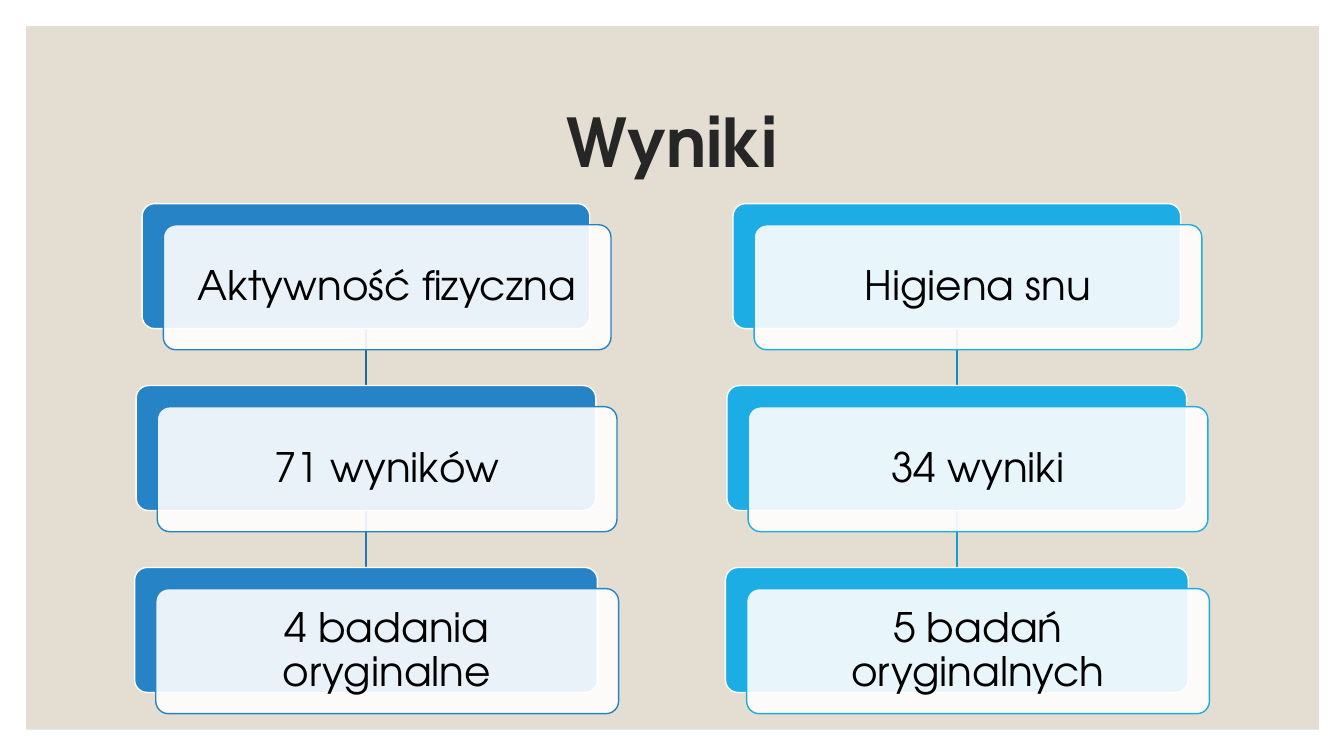
from dataclasses import dataclass

from lxml.etree import SubElement
from pptx import Presentation
from pptx.dml.color import RGBColor
from pptx.enum.shapes import MSO_CONNECTOR, MSO_SHAPE
from pptx.enum.text import MSO_ANCHOR, PP_ALIGN
from pptx.oxml.ns import qn
from pptx.util import Inches, Pt

# Content
TITLE = "Wyniki"
COLUMNS = [
    {"center": 3.63, "color": "2683C6", "links": ["1E699F", "2277B4"],
     "steps": ["Aktywność fizyczna", "71 wyników", "4 badania oryginalne"]},
    {"center": 9.49, "color": "1CADE4", "links": ["168BB7", "199DCF"],
     "steps": ["Higiena snu", "34 wyniki", "5 badań oryginalnych"]},
]


@dataclass(frozen=True)
class Theme:
    font: str = "TeX Gyre Adventor"
    title_size: int = 48
    card_size: int = 29
    title_color: str = "262626"
    card_text: str = "000000"
    white: str = "FFFFFF"
    backdrop: str = "E3DED1"
    card_opacity: int = 90


THEME = Theme()

# Layout in inches
WIDTHS = [4.44, 4.56, 4.59]
CARD_HEIGHT = 1.24
FIRST_TOP = 2.02
ROW_STEP = 1.805
CARD_SHIFT = 0.21
CARD_INSET = 0.15


def rgb(code):
    return RGBColor.from_string(code)


def add_box(page, kind, left, top, width, height, fill, line=None):
    box = page.shapes.add_shape(
        kind, Inches(left), Inches(top), Inches(width), Inches(height))
    box.shadow.inherit = False
    box.fill.solid()
    box.fill.fore_color.rgb = rgb(fill)
    if line:
        box.line.color.rgb = rgb(line)
        box.line.width = Pt(1)
    else:
        box.line.fill.background()
    return box


def add_card(page, left, top, width, fill, line):
    card = add_box(page, MSO_SHAPE.ROUNDED_RECTANGLE,
                   left, top, width, CARD_HEIGHT, fill, line)
    card.adjustments[0] = 0.1
    return card


def set_opacity(box, percent):
    color = box.fill._xPr.find(qn("a:solidFill"))[0]
    SubElement(color, qn("a:alpha"), val=str(percent * 1000))


def write(box, text, size, color, bold=False, inset=0.1):
    frame = box.text_frame
    margin = Inches(inset)
    frame_format = {"word_wrap": True, "vertical_anchor": MSO_ANCHOR.MIDDLE,
                    "margin_left": margin, "margin_right": margin,
                    "margin_top": margin, "margin_bottom": margin}
    for name, value in frame_format.items():
        setattr(frame, name, value)
    para = frame.paragraphs[0]
    para.alignment = PP_ALIGN.CENTER
    para.line_spacing = 0.9
    span = para.add_run()
    span.text = text
    font_format = {"name": THEME.font, "size": Pt(size), "bold": bold}
    for name, value in font_format.items():
        setattr(span.font, name, value)
    span.font.color.rgb = rgb(color)


def add_link(page, color):
    link = page.shapes.add_connector(MSO_CONNECTOR.STRAIGHT, 0, 0, 0, 0)
    link.line.color.rgb = rgb(color)
    link.line.width = Pt(1)
    SubElement(link._element.spPr, qn("a:effectLst"))
    return link


def add_column(page, column):
    # Links come first so that they lie behind the cards
    links = [add_link(page, color) for color in column["links"]]
    backs = []
    for row, (text, width) in enumerate(zip(column["steps"], WIDTHS)):
        left = column["center"] - width / 2
        top = FIRST_TOP + row * ROW_STEP
        backs.append(add_card(page, left, top, width,
                              column["color"], THEME.white))
        front = add_card(page, left + CARD_SHIFT, top + CARD_SHIFT, width,
                         THEME.white, column["color"])
        set_opacity(front, THEME.card_opacity)
        write(front, text, THEME.card_size, THEME.card_text,
              inset=CARD_INSET)
    for link, upper, lower in zip(links, backs, backs[1:]):
        link.begin_connect(upper, 2)
        link.end_connect(lower, 0)


def main():
    deck = Presentation()
    deck.slide_width, deck.slide_height = Inches(13.33), Inches(7.5)
    page = deck.slides.add_slide(deck.slide_layouts[5])

    # Backdrop and title
    title = page.shapes.title
    backdrop = add_box(page, MSO_SHAPE.RECTANGLE,
                       0.26, 0.26, 12.82, 6.98, THEME.backdrop)
    title._element.addprevious(backdrop._element)
    place = {"left": 1.17, "top": 0.7, "width": 11, "height": 1.5}
    for name, value in place.items():
        setattr(title, name, Inches(value))
    write(title, TITLE, THEME.title_size, THEME.title_color, bold=True)

    # Result columns
    for column in COLUMNS:
        add_column(page, column)

    deck.save("out.pptx")


if __name__ == "__main__":
    main()
